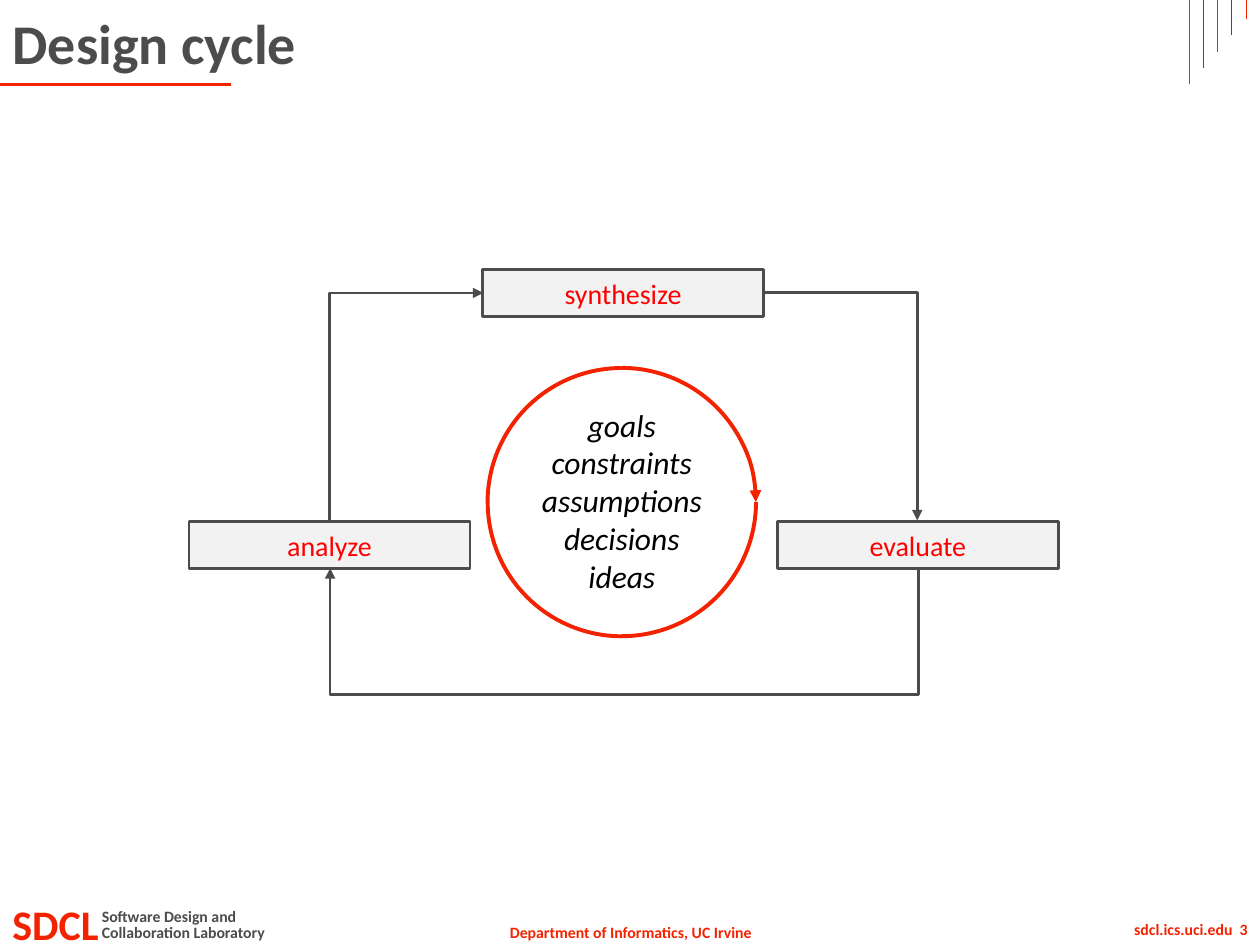
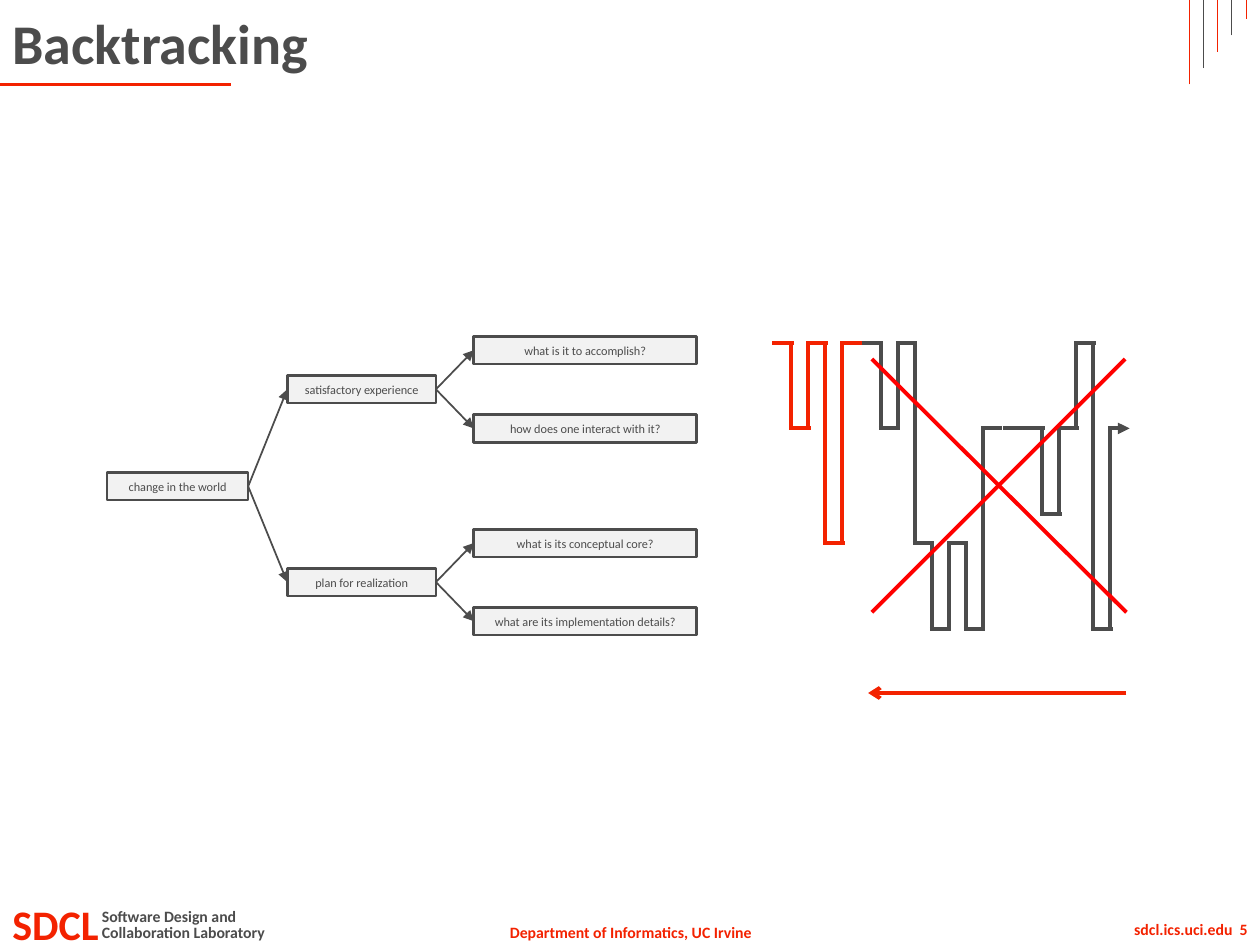
import pptx
import pptx.dml.color
import pptx.enum.shapes
import pptx.enum.text
import pptx.oxml.ns
import pptx.oxml.xmlchemy
import pptx.util
import lxml.etree

Inches = pptx.util.Inches
Align = pptx.enum.text.PP_ALIGN
Shape = pptx.enum.shapes.MSO_SHAPE
Connector = pptx.enum.shapes.MSO_CONNECTOR
rgb = pptx.dml.color.RGBColor.from_string
qn = pptx.oxml.ns.qn

FONT = "Calibri"
ORANGE = "F32200"
GREY = "4C4C4C"
RED = "FF0000"
PALE = "F2F2F2"
BLACK = "000000"


def stroke(mark, colour, weight, arrowhead=None):
    mark.line.color.rgb = rgb(colour)
    mark.line.width = pptx.util.Pt(weight)
    properties = mark._element.spPr
    if arrowhead:
        lxml.etree.SubElement(properties.find(qn("a:ln")), qn("a:tailEnd"), type=arrowhead)
    lxml.etree.SubElement(properties, qn("a:effectLst"))


def write(frame, lines, size, colour, align=Align.LEFT, bold=False, italic=False, wrap=True):
    frame.word_wrap = wrap
    for index, line in enumerate(lines):
        paragraph = frame.add_paragraph() if index else frame.paragraphs[0]
        paragraph.alignment = align
        run = paragraph.add_run()
        run.text = line
        run.font.name = FONT
        run.font.size = pptx.util.Pt(size)
        run.font.bold = bold
        run.font.italic = italic
        run.font.color.rgb = rgb(colour)


deck = pptx.Presentation()
deck.slide_width = Inches(10)
deck.slide_height = Inches(7.5)

pages = []
for heading, number in [("Design cycle", 3), ("Backtracking", 5)]:
    page = deck.slides.add_slide(deck.slide_layouts[5])
    pages.append(page)

    for words, left, top, width, height, size, colour, align, wrap in [
        ("Department of Informatics, UC Irvine", 3.93, 7.27, 2.15, 0.25, 9, ORANGE, Align.CENTER, False),
        ("SDCL", 0, 7.08, 1, 0.5, 24, ORANGE, Align.LEFT, True),
        ("Collaboration Laboratory", 0.71, 7.27, 1.53, 0.25, 9, GREY, Align.LEFT, False),
        ("Software Design and", 0.71, 7.15, 1.29, 0.25, 9, GREY, Align.LEFT, False),
        (f"sdcl.ics.uci.edu  {number}", 7.84, 7.25, 2.16, 0.25, 9, ORANGE, Align.RIGHT, True),
    ]:
        footer = page.shapes.add_textbox(Inches(left), Inches(top), Inches(width), Inches(height))
        write(footer.text_frame, [words], size, colour, align, bold=True, wrap=wrap)

    underline = page.shapes.add_connector(Connector.STRAIGHT, 0, Inches(0.67), Inches(1.83), Inches(0.67))
    stroke(underline, ORANGE, 1.5)
    for index in range(5):
        x = Inches(9.44 + 0.1125 * index)
        stripe = page.shapes.add_connector(Connector.STRAIGHT, x, Inches(0.67 - 0.13 * index), x, 0)
        stroke(stripe, GREY if index % 2 else ORANGE, 0.5)

    title = page.shapes.title
    title.left, title.top, title.width, title.height = 0, 0, Inches(9), Inches(0.67)
    title.text_frame.vertical_anchor = pptx.enum.text.MSO_ANCHOR.MIDDLE
    title.text_frame.auto_size = pptx.enum.text.MSO_AUTO_SIZE.NONE
    write(title.text_frame, [heading], 32, GREY, bold=True)

cycle, backtracking = pages

steps = {}
for page, words, left, top, width, height, size, colour in [
    (cycle, "analyze", 1.5, 4.14, 2.23, 0.37, 16, RED),
    (cycle, "evaluate", 6.17, 4.14, 2.23, 0.37, 16, RED),
    (cycle, "synthesize", 3.83, 2.14, 2.23, 0.37, 16, RED),
    (backtracking, "change in the world", 0.85, 3.75, 1.12, 0.22, 7, GREY),
    (backtracking, "satisfactory experience", 2.28, 2.98, 1.18, 0.22, 7, GREY),
    (backtracking, "plan for realization", 2.28, 4.51, 1.18, 0.22, 7, GREY),
    (backtracking, "what is it to accomplish?", 3.76, 2.67, 1.77, 0.22, 7, GREY),
    (backtracking, "how does one interact with it?", 3.76, 3.29, 1.77, 0.22, 7, GREY),
    (backtracking, "what is its conceptual core?", 3.76, 4.2, 1.77, 0.22, 7, GREY),
    (backtracking, "what are its implementation details?", 3.76, 4.82, 1.77, 0.22, 7, GREY),
]:
    step = page.shapes.add_shape(Shape.RECTANGLE, Inches(left), Inches(top), Inches(width), Inches(height))
    step.fill.solid()
    step.fill.fore_color.rgb = rgb(PALE)
    stroke(step, GREY, 1.5)
    step.text_frame.vertical_anchor = pptx.enum.text.MSO_ANCHOR.MIDDLE
    write(step.text_frame, [words], size, colour, Align.CENTER)
    steps[words] = step

for left, top, width, height, turn, flip, bend, reach in [
    (2.32, 2.62, 1.81, 1.22, 90, "1", "bentConnector2", None),
    (6.06, 2.32, 1.22, 1.81, 0, "0", "bentConnector2", None),
    (4.95, 2.17, 0.01, 4.67, 90, "0", "bentConnector3", 103),
]:
    transition = cycle.shapes.add_connector(
        Connector.ELBOW, Inches(left), Inches(top), Inches(left + width), Inches(top + height))
    frame = transition._element.spPr.find(qn("a:xfrm"))
    frame.set("rot", str(turn * 60000))
    frame.set("flipH", flip)
    frame.set("flipV", flip)
    geometry = transition._element.spPr.find(qn("a:prstGeom"))
    geometry.set("prst", bend)
    if reach:
        lxml.etree.SubElement(geometry.find(qn("a:avLst")), qn("a:gd"), name="adj1", fmla=f"val {reach * 100000}")
    stroke(transition, GREY, 1.5, "triangle")

for turn in range(0, 360, 90):
    quarter = cycle.shapes.add_shape(Shape.ARC, Inches(3.87), Inches(2.92), Inches(2.13), Inches(2.13))
    quarter.rotation = turn
    quarter.fill.background()
    stroke(quarter, ORANGE, 2.25, None if turn else "triangle")

concerns = cycle.shapes.add_textbox(Inches(4.19), Inches(3.17), Inches(1.49), Inches(1.62))
write(concerns.text_frame, ["goals", "constraints", "assumptions", "decisions", "ideas"],
      18, BLACK, Align.CENTER, italic=True, wrap=False)

for parent, children in {
    "change in the world": ["satisfactory experience", "plan for realization"],
    "satisfactory experience": ["what is it to accomplish?", "how does one interact with it?"],
    "plan for realization": ["what is its conceptual core?", "what are its implementation details?"],
}.items():
    for child in children:
        branch = backtracking.shapes.add_connector(Connector.STRAIGHT, 0, 0, 0, 0)
        branch.begin_connect(steps[parent], 3)
        branch.end_connect(steps[child], 1)
        stroke(branch, GREY, 1, "triangle")

WORLD, EXPERIENCE, INTERACTION, CORE, DETAILS = 2.72, 3.4, 4.08, 4.31, 4.99
PITCH, TREAD = 0.135, 0.17
trail = []
for start, colour, levels in [
    (6.13, ORANGE, [WORLD, EXPERIENCE, WORLD, CORE, WORLD]),
    (6.84, GREY, [WORLD, EXPERIENCE, WORLD, CORE, DETAILS, CORE, DETAILS, EXPERIENCE]),
    (7.96, GREY, [EXPERIENCE]),
    (8.12, GREY, [EXPERIENCE, INTERACTION, EXPERIENCE, WORLD, DETAILS, EXPERIENCE]),
]:
    for index, level in enumerate(levels):
        x = start + PITCH * index
        if index:
            riser = x + 0.015
            upper, lower = sorted([levels[index - 1], level])
            trail.append((riser, upper, riser, lower, colour, None))
        trail.append((x, level, x + TREAD, level, colour, None))
trail[-1] = trail[-1][:5] + ("triangle",)

retreat = (8.94, 5.5, 6.89, 5.5, ORANGE, "arrow")
cross = [(6.92, 2.85, 8.94, 4.86, RED, None), (6.92, 4.86, 8.93, 2.85, RED, None)]
for x1, y1, x2, y2, colour, arrowhead in trail + [retreat] + cross:
    move = backtracking.shapes.add_connector(
        Connector.STRAIGHT, Inches(x1), Inches(y1), Inches(x2), Inches(y2))
    stroke(move, colour, 2.25, arrowhead)

deck.save("out.pptx")
